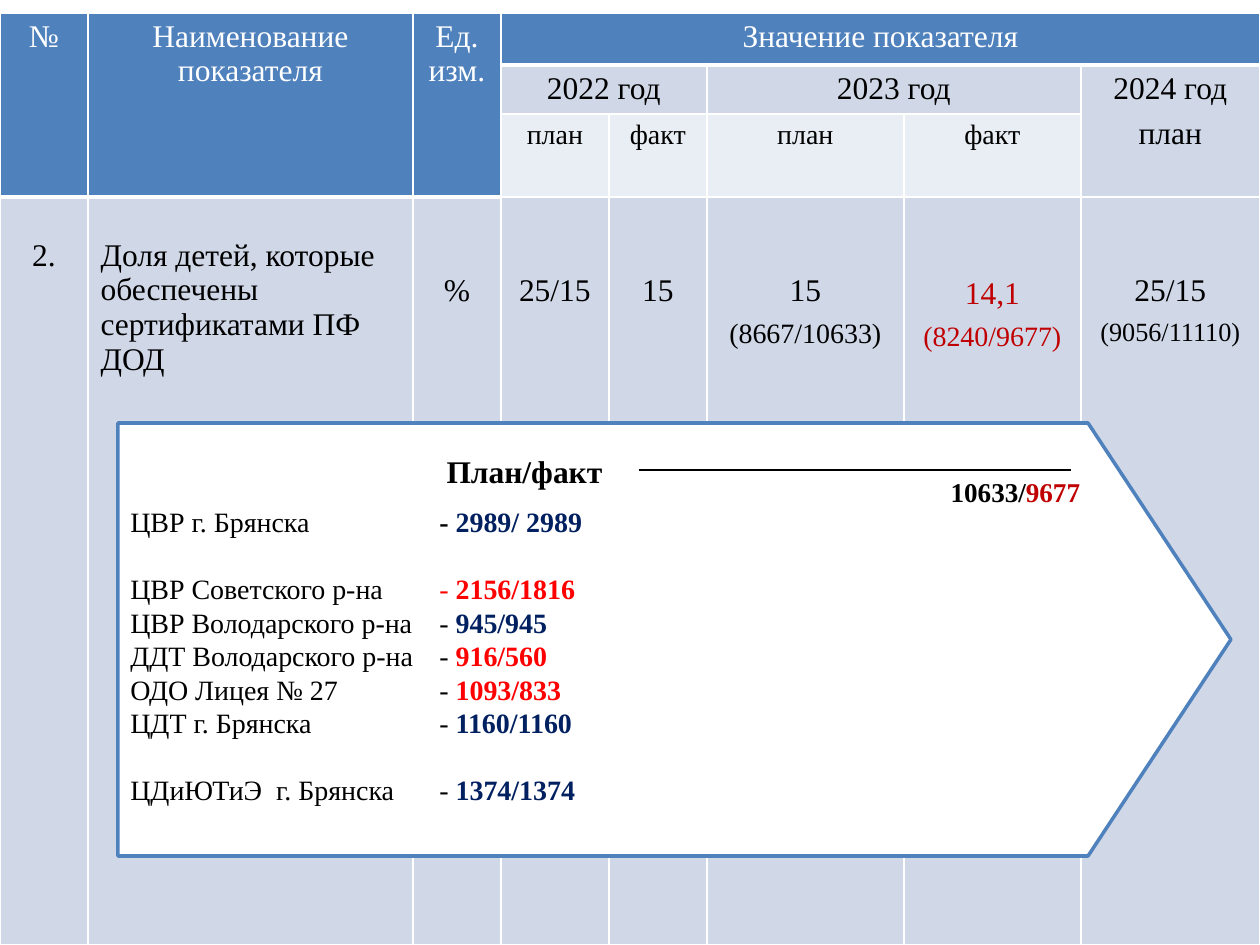
from lxml.etree import SubElement
from pptx import Presentation
from pptx.dml.color import RGBColor
from pptx.enum.shapes import MSO_CONNECTOR, MSO_SHAPE
from pptx.enum.text import MSO_ANCHOR, PP_ALIGN
from pptx.oxml.ns import qn
from pptx.util import Pt

PX = 914400 // 126
FONT = "Times New Roman"
COLORS = {
    "white": "FFFFFF", "black": "000000", "blue": "4F81BD", "band": "D0D8E8",
    "light": "E9EDF4", "navy": "002060", "red": "FF0000", "dark_red": "C00000",
}

COLUMNS = [88, 325, 88, 108, 98, 197, 177, 179]
ROWS = [52, 49, 83, 748]
HEAD = {"fill": "blue", "color": "white", "bottom": 3}
YEAR = {"fill": "band"}
KIND = {"fill": "light", "size": 16}
# (row, column, rows spanned, columns spanned, lines, format)
CELLS = [
    (0, 0, 3, 1, ["№"], HEAD),
    (0, 1, 3, 1, ["Наименование показателя"], HEAD),
    (0, 2, 3, 1, ["Ед. изм."], HEAD),
    (0, 3, 1, 5, ["Значение показателя"], HEAD),
    (1, 3, 1, 2, ["2022 год"], YEAR),
    (1, 5, 1, 2, ["2023 год"], YEAR),
    (1, 7, 2, 1, ["2024 год", "план"], YEAR),
    (2, 3, 1, 1, ["план"], KIND),
    (2, 4, 1, 1, ["факт"], KIND),
    (2, 5, 1, 1, ["план"], KIND),
    (2, 6, 1, 1, ["факт"], KIND),
    (3, 0, 1, 1, ["2."], {"top": 41}),
    (3, 1, 1, 1, ["Доля детей, которые обеспечены сертификатами ПФ ДОД"],
     {"top": 41, "align": PP_ALIGN.LEFT}),
    (3, 2, 1, 1, ["%"], {"top": 76}),
    (3, 3, 1, 1, ["25/15"], {"top": 76}),
    (3, 4, 1, 1, ["15"], {"top": 76}),
    (3, 5, 1, 1, ["15", "(8667/10633)"], {"top": 76, "note_size": 16}),
    (3, 6, 1, 1, ["14,1", "(8240/9677)"],
     {"top": 79, "note_size": 16, "color": "dark_red"}),
    (3, 7, 1, 1, ["25/15", "(9056/11110)"], {"top": 76, "note_size": 15}),
]

# (centre, dash format, plan/fact, colour, starts a new group)
CENTRES = [
    ("ЦВР г. Брянска", {"bold": True}, "2989/ 2989", "navy", False),
    ("ЦВР Советского р-на", {"color": "red"}, "2156/1816", "red", True),
    ("ЦВР Володарского р-на", {}, "945/945", "navy", False),
    ("ДДТ Володарского р-на", {}, "916/560", "red", False),
    ("ОДО Лицея № 27", {}, "1093/833", "red", False),
    ("ЦДТ г. Брянска", {}, "1160/1160", "navy", False),
    ("ЦДиЮТиЭ  г. Брянска", {}, "1374/1374", "navy", True),
]
LINE_PITCH = 19.14


def rgb(name):
    return RGBColor.from_string(COLORS[name])


def write(paragraph, text, size=18, color="black", bold=False, align=None):
    run = paragraph.add_run()
    run.text = text
    run.font.name = FONT
    run.font.size = Pt(size)
    run.font.bold = bold
    run.font.color.rgb = rgb(color)
    if align is not None:
        paragraph.alignment = align


def next_paragraph(frame, index):
    return frame.add_paragraph() if index else frame.paragraphs[0]


def set_borders(cell, bottom):
    properties = cell._tc.get_or_add_tcPr()
    for side, width in (("L", 1), ("R", 1), ("T", 1), ("B", bottom)):
        border = SubElement(properties, qn(f"a:ln{side}"), w=str(Pt(width)))
        fill = SubElement(border, qn("a:solidFill"))
        SubElement(fill, qn("a:srgbClr"), val=COLORS["white"])


def fill_cell(table, row, column, row_span, column_span, lines, style):
    cell = table.cell(row, column)
    for r in range(row, row + row_span):
        for c in range(column, column + column_span):
            part = table.cell(r, c)
            set_borders(part, style.get("bottom", 1))
            part.fill.solid()
            part.fill.fore_color.rgb = rgb(style.get("fill", "band"))
    if row_span * column_span > 1:
        cell.merge(table.cell(row + row_span - 1, column + column_span - 1))
    cell.margin_top = style.get("top", 6) * PX
    size = style.get("size", 18)
    for index, line in enumerate(lines):
        paragraph = next_paragraph(cell.text_frame, index)
        if index:
            paragraph.space_before = Pt(6)
            size = style.get("note_size", size)
        write(paragraph, line, size=size, color=style.get("color", "black"),
              align=style.get("align", PP_ALIGN.CENTER))


def add_indicator_table(slide):
    table = slide.shapes.add_table(
        len(ROWS), len(COLUMNS), 0, 13 * PX, sum(COLUMNS) * PX, sum(ROWS) * PX).table
    table.horz_banding = False
    for column, width in zip(table.columns, COLUMNS):
        column.width = width * PX
    for row, height in zip(table.rows, ROWS):
        row.height = height * PX
    for cell in CELLS:
        fill_cell(table, *cell)


def add_centres(slide):
    arrow = slide.shapes.add_shape(
        MSO_SHAPE.PENTAGON, 118 * PX, 423 * PX, 1113 * PX, 433 * PX)
    arrow.adjustments[0] = 0.33
    arrow.shadow.inherit = False
    arrow.fill.solid()
    arrow.fill.fore_color.rgb = rgb("white")
    arrow.line.color.rgb = rgb("blue")
    arrow.line.width = Pt(2)
    frame = arrow.text_frame
    frame.word_wrap = True
    frame.vertical_anchor = MSO_ANCHOR.TOP
    frame.margin_top = 82 * PX
    for index, (centre, dash, value, color, new_group) in enumerate(CENTRES):
        paragraph = next_paragraph(frame, index)
        paragraph.line_spacing = Pt(LINE_PITCH)
        paragraph.space_before = Pt(LINE_PITCH if new_group else 0)
        write(paragraph, centre + "\t", size=16, align=PP_ALIGN.LEFT)
        write(paragraph, "- ", size=16, **dash)
        write(paragraph, value, size=16, color=color, bold=True)
        tabs = SubElement(paragraph._p.get_or_add_pPr(), qn("a:tabLst"))
        SubElement(tabs, qn("a:tab"), pos=str(309 * PX), algn="l")


def add_label(slide, left, top, width, height, runs, size, align):
    frame = slide.shapes.add_textbox(
        left * PX, top * PX, width * PX, height * PX).text_frame
    frame.word_wrap = True
    frame.margin_left = frame.margin_right = 0
    frame.margin_top = frame.margin_bottom = 0
    for text, color in runs:
        write(frame.paragraphs[0], text, size=size, color=color, bold=True, align=align)


def add_total(slide):
    add_label(slide, 433, 452, 183, 38, [("План/факт", "black")], 18, PP_ALIGN.CENTER)
    rule = slide.shapes.add_connector(
        MSO_CONNECTOR.STRAIGHT, 639 * PX, 470 * PX, 1071 * PX, 470 * PX)
    rule.line.color.rgb = rgb("black")
    rule.line.width = Pt(1)
    SubElement(rule._element.spPr, qn("a:effectLst"))
    add_label(slide, 900, 475, 180, 34, [("10633/", "black"), ("9677", "dark_red")],
              15.5, PP_ALIGN.RIGHT)


def main():
    deck = Presentation()
    deck.slide_width, deck.slide_height = 1260 * PX, 945 * PX
    slide = deck.slides.add_slide(deck.slide_layouts[6])
    add_indicator_table(slide)
    add_centres(slide)
    add_total(slide)
    deck.save("out.pptx")


if __name__ == "__main__":
    main()
